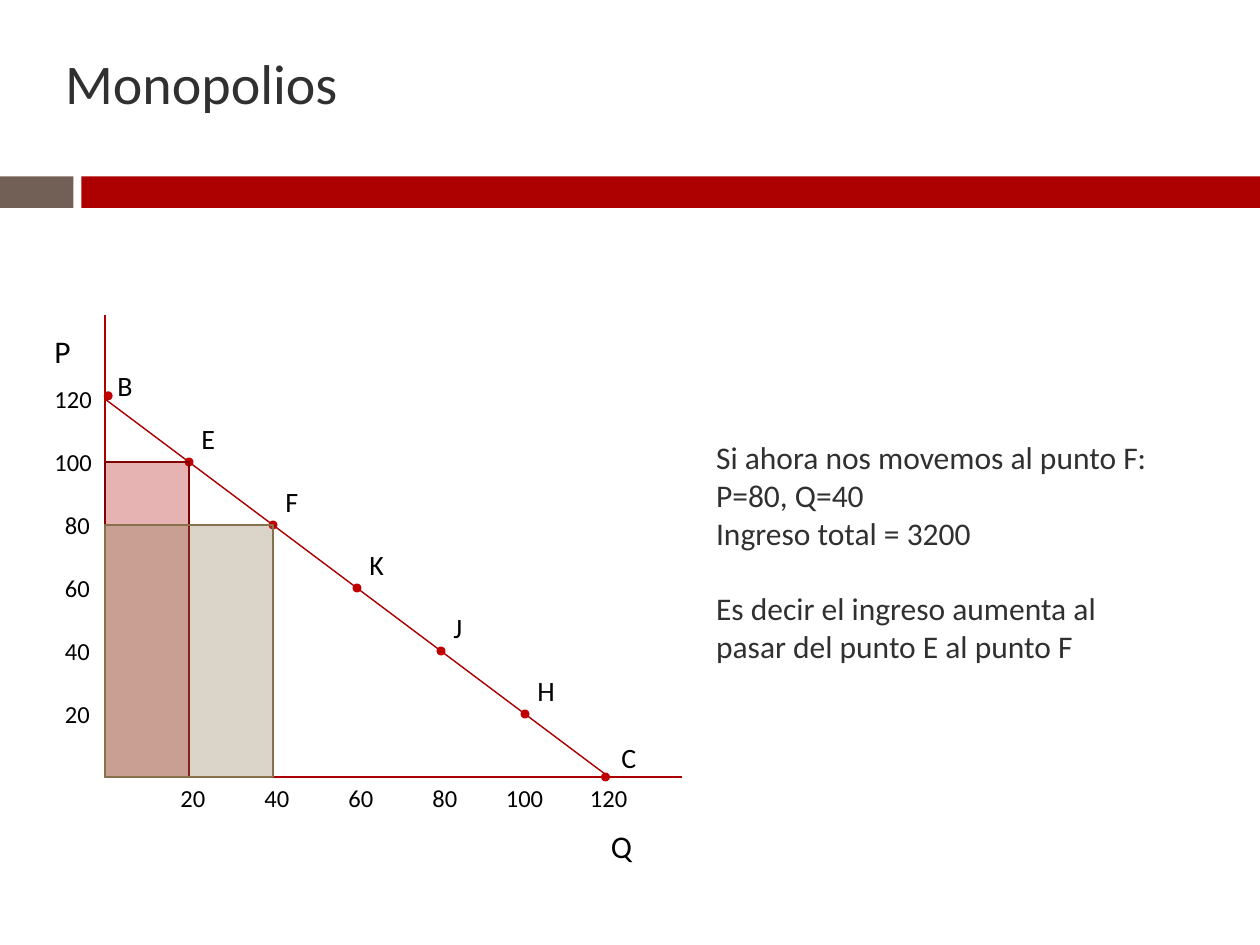
from pptx import Presentation
from pptx import util as u
from pptx.dml.color import RGBColor
from pptx.enum import shapes, text
from pptx.oxml.ns import qn
from lxml import etree

Pt = u.Pt
RED, DOT, DARK, BLACK = "AD0101", "C00000", "303030", "000000"


def color(value):
    return RGBColor.from_string(value)


def set_font(p, size, value):
    p.font.name, p.font.size = "Calibri", Pt(size)
    p.font.color.rgb = color(value)


def place(sp, x, y, w, h):
    sp.left, sp.top, sp.width, sp.height = Pt(x), Pt(y), Pt(w), Pt(h)


def add_shape(s, kind, x, y, w, h, fill, line=None, alpha=None):
    sp = s.shapes.add_shape(kind, Pt(x), Pt(y), Pt(w), Pt(h))
    sp.shadow.inherit = False
    sp.fill.solid()
    sp.fill.fore_color.rgb = color(fill)
    if alpha:
        clr = sp._element.spPr.find(qn("a:solidFill"))[0]
        etree.SubElement(clr, qn("a:alpha")).set("val", str(alpha * 1000))
    if line:
        sp.line.color.rgb = color(line)
        sp.line.width = Pt(1.5)
    else:
        sp.line.fill.background()


def add_line(s, x1, y1, x2, y2):
    c = s.shapes.add_connector(shapes.MSO_CONNECTOR.STRAIGHT,
                               Pt(x1), Pt(y1), Pt(x2), Pt(y2))
    c.line.color.rgb = color(RED)
    c.line.width = Pt(0.79)
    etree.SubElement(c._element.spPr, qn("a:effectLst"))


def add_label(s, x, y, w, h, label, size):
    tf = s.shapes.add_textbox(Pt(x), Pt(y), Pt(w), Pt(h)).text_frame
    tf.word_wrap = True
    p = tf.paragraphs[0]
    p.text = label
    set_font(p, size, BLACK)


def header(s, x, y, w):
    rect = shapes.MSO_SHAPE.RECTANGLE
    add_shape(s, rect, x, y + 100.8, 42, 18, "726056")
    add_shape(s, rect, x + 46.5, y + 100.8, w - 46.5, 18, RED)
    title = s.shapes.title
    place(title, x + 30, y + 24, w - 73.5, 46)
    tf = title.text_frame
    tf.vertical_anchor = text.MSO_ANCHOR.MIDDLE
    p = tf.paragraphs[0]
    p.text = "Monopolios"
    p.alignment = text.PP_ALIGN.LEFT
    set_font(p, 32, DARK)


def explanation(s, x, y, w, h):
    body = s.placeholders[1]
    place(body, x, y, w, h)
    tf = body.text_frame
    tf.vertical_anchor = text.MSO_ANCHOR.TOP
    tf.margin_top = Pt(25.4)
    lines = [
        ("Si ahora nos movemos al punto F:", 0),
        ("P=80, Q=40", 0),
        ("Ingreso total = 3200", 0),
        ("Es decir el ingreso aumenta al pasar del punto E al punto F", 21.5),
    ]
    for i, (line, gap) in enumerate(lines):
        p = tf.add_paragraph() if i else tf.paragraphs[0]
        p.text = line
        p.space_before = Pt(gap)
        set_font(p, 18, DARK)
        pPr = p._p.get_or_add_pPr()
        pPr.set("marL", "0")
        pPr.set("indent", "0")
        bullet = etree.Element(qn("a:buNone"))
        pPr.find(qn("a:spcBef")).addnext(bullet)


def demand_chart(s, x, y, w, h):
    base = y + h

    def px(q):
        return x + q * 2.4

    def py(price):
        return base - price * 1.8

    add_line(s, x, y, x, base)
    add_line(s, x, base, x + w, base)
    add_line(s, px(0), py(120), px(120), py(0))
    add_label(s, x - 36, y + 6, 24, 29, "P", 18)
    add_label(s, px(120) - 6, base + 25, 24, 29, "Q", 18)

    for value in range(20, 121, 20):
        shift = 6 if value >= 100 else 0
        add_label(s, px(value) - 12 - shift, base, 54, 24.5, str(value), 14)
        add_label(s, x - 30 - shift, py(value) - 12, 54, 24.5, str(value), 14)

    points = [("B", 0, 1.8, -1.8, 21), ("E", 20, 0, 0, 26.5), ("F", 40, 0, 0, 26.5),
              ("K", 60, 0, 0, 26.5), ("J", 80, 0, 0, 26.5), ("H", 100, 0, 0, 26.5),
              ("C", 120, -2, 0, 24.5)]
    for name, q, dx, dy, rise in points:
        cx, cy = px(q), py(120 - q)
        add_shape(s, shapes.MSO_SHAPE.OVAL, cx + dx - 1.8, cy + dy - 1.8,
                  3.6, 3.6, DOT, DOT)
        add_label(s, cx, cy - rise, 18, 26.5, name, 16)

    for q, fill, line in [(20, RED, "800101"), (40, "87714D", "87714D")]:
        top = py(120 - q)
        add_shape(s, shapes.MSO_SHAPE.RECTANGLE, x, top, px(q) - x, base - top,
                  fill, line, 30)


def main():
    prs = Presentation()
    prs.slide_width, prs.slide_height = Pt(720), Pt(540)
    s = prs.slides.add_slide(prs.slide_layouts[1])
    header(s, 0, 0, 720)
    demand_chart(s, 60, 180, 330, 264)
    explanation(s, 402, 225, 270, 269)
    prs.save("out.pptx")


if __name__ == "__main__":
    main()
